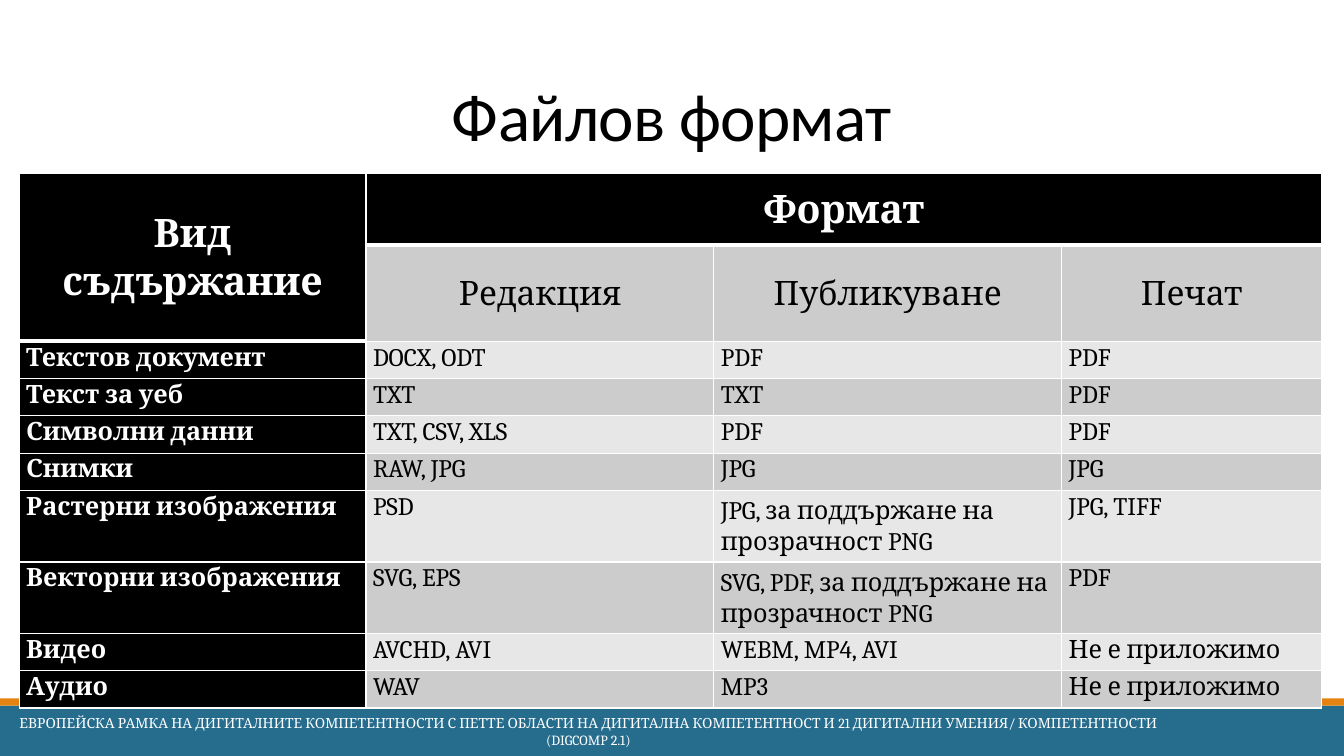
from dataclasses import dataclass

import pptx
import pptx.dml.color
import pptx.enum.shapes
import pptx.enum.text
import pptx.oxml
import pptx.oxml.ns
import pptx.util

EMU_PER_PX = 9144  # 100 px to the inch
ALIGN = pptx.enum.text.PP_ALIGN
ANCHOR = pptx.enum.text.MSO_ANCHOR


@dataclass(frozen=True)
class Theme:
    black: str = "000000"
    white: str = "FFFFFF"
    band_dark: str = "CCCCCC"
    band_light: str = "E7E7E7"
    blue: str = "256C8D"
    orange: str = "E48312"
    title_font: str = "Calibri"
    body_font: str = "Cambria"
    title_size: int = 48
    header_size: int = 28
    subheader_size: int = 24
    body_size: int = 18
    footer_size: int = 10


@dataclass(frozen=True)
class Box:
    left: int
    top: int
    width: int
    height: int

    def emu(self) -> tuple[int, ...]:
        return tuple(px(n) for n in (self.left, self.top, self.width, self.height))


@dataclass(frozen=True)
class TextStyle:
    size: int
    color: str
    font: str = "Cambria"
    bold: bool = False
    align: ALIGN = ALIGN.CENTER
    anchor: ANCHOR = ANCHOR.MIDDLE


@dataclass(frozen=True)
class ContentRow:
    kind: str
    editing: str
    publishing: str
    printing: str
    height: int = 37

    def texts(self) -> tuple[str, ...]:
        return self.kind, self.editing, self.publishing, self.printing


THEME = Theme()
SLIDE = Box(0, 0, 1333, 750)
TITLE = Box(0, 0, 1333, 159)
BANDS = ((Box(0, 700, 1333, 50), THEME.blue), (Box(0, 693, 1333, 7), THEME.orange))
TABLE = Box(19, 172, 1292, 507)
FOOTER = Box(0, 706, 1167, 40)
COLUMN_WIDTHS = (344, 345, 345, 258)
HEADER_HEIGHTS = (71, 70)
CELL_INSET = 7
FOOTER_INSET = 4
THIN, THICK = 1, 3

HEADER_STYLE = TextStyle(THEME.header_size, THEME.white, bold=True)
SUBHEADER_STYLE = TextStyle(THEME.subheader_size, THEME.black)
KIND_STYLE = TextStyle(THEME.body_size, THEME.white, bold=True,
                       align=ALIGN.JUSTIFY, anchor=ANCHOR.TOP)
BODY_STYLE = TextStyle(THEME.body_size, THEME.black, align=ALIGN.JUSTIFY, anchor=ANCHOR.TOP)
WRAPPED_STYLE = TextStyle(THEME.body_size, THEME.black, align=ALIGN.LEFT)

SUBHEADERS = ("Редакция", "Публикуване", "Печат")
CONTENT = (
    ContentRow("Текстов документ", "DOCX, ODT", "PDF", "PDF"),
    ContentRow("Текст за уеб", "TXT", "TXT", "PDF"),
    ContentRow("Символни данни", "TXT, CSV, XLS", "PDF", "PDF"),
    ContentRow("Снимки", "RAW, JPG", "JPG", "JPG"),
    ContentRow("Растерни изображения", "PSD",
               "JPG, за поддържане на прозрачност PNG", "JPG, TIFF", 71),
    ContentRow("Векторни изображения", "SVG, EPS",
               "SVG, PDF, за поддържане на прозрачност PNG", "PDF", 71),
    ContentRow("Видео", "AVCHD, AVI", "WEBM, MP4, AVI", "Не е приложимо"),
    ContentRow("Аудио", "WAV", "MP3", "Не е приложимо"),
)
FOOTER_TEXT = ("ЕВРОПЕЙСКА РАМКА НА ДИГИТАЛНИТЕ КОМПЕТЕНТНОСТИ С ПЕТТЕ ОБЛАСТИ НА ДИГИТАЛНА "
               "КОМПЕТЕНТНОСТ И 21 ДИГИТАЛНИ УМЕНИЯ/ КОМПЕТЕНТНОСТИ (DIGCOMP 2.1)")


def px(length: int) -> int:
    return pptx.util.Emu(length * EMU_PER_PX)


def rgb(color: str) -> pptx.dml.color.RGBColor:
    return pptx.dml.color.RGBColor.from_string(color)


def write(text_frame, text: str, style: TextStyle, line_spacing: float = 1.0, space_after: int = 0):
    """Fill the first paragraph with one styled run and return the run."""
    paragraph = text_frame.paragraphs[0]
    paragraph.alignment = style.align
    paragraph.line_spacing = line_spacing
    paragraph.space_after = pptx.util.Pt(space_after)
    run = paragraph.add_run()
    run.text = text
    run.font.size = pptx.util.Pt(style.size)
    run.font.name = style.font
    run.font.bold = style.bold
    run.font.color.rgb = rgb(style.color)
    return run


def add_band(slide, box: Box, color: str) -> None:
    shape = slide.shapes.add_shape(pptx.enum.shapes.MSO_SHAPE.RECTANGLE, *box.emu())
    shape.shadow.inherit = False
    shape.fill.solid()
    shape.fill.fore_color.rgb = rgb(color)
    shape.line.fill.background()


def format_title(slide) -> None:
    title = slide.shapes.title
    title.left, title.top, title.width, title.height = TITLE.emu()
    title.text_frame.vertical_anchor = ANCHOR.BOTTOM
    title.text_frame.auto_size = pptx.enum.text.MSO_AUTO_SIZE.NONE
    style = TextStyle(THEME.title_size, THEME.black, THEME.title_font)
    run = write(title.text_frame, "Файлов формат", style, line_spacing=0.85)
    run.font._element.set("spc", "-50")


def dress_cell(cell, fill: str, top: int, bottom: int) -> None:
    """Set the white borders, fill and margins of a cell."""
    properties = cell._tc.get_or_add_tcPr()
    for side, width in (("L", THIN), ("R", THIN), ("T", top), ("B", bottom)):
        properties.append(pptx.oxml.parse_xml(
            f'<a:ln{side} {pptx.oxml.ns.nsdecls("a")} w="{pptx.util.Pt(width)}">'
            f'<a:solidFill><a:srgbClr val="{THEME.white}"/></a:solidFill></a:ln{side}>'))
    cell.fill.solid()
    cell.fill.fore_color.rgb = rgb(fill)
    cell.margin_left = cell.margin_right = px(CELL_INSET)
    cell.margin_top = cell.margin_bottom = 0


def fill_cell(cell, text: str, style: TextStyle) -> None:
    cell.vertical_anchor = style.anchor
    write(cell.text_frame, text, style, line_spacing=1.07, space_after=8)


def add_format_table(slide) -> None:
    heights = HEADER_HEIGHTS + tuple(row.height for row in CONTENT)
    frame = slide.shapes.add_table(len(heights), len(COLUMN_WIDTHS), *TABLE.emu())
    table = frame.table
    table.first_row = table.horz_banding = False
    for column, width in zip(table.columns, COLUMN_WIDTHS):
        column.width = px(width)

    for r, height in enumerate(heights):
        table.rows[r].height = px(height)
        band = THEME.band_dark if r % 2 else THEME.band_light
        for c in range(len(COLUMN_WIDTHS)):
            header_end = 1 if c == 0 else 0
            dress_cell(table.cell(r, c), THEME.black if r == 0 or c == 0 else band,
                       top=THICK if r == header_end + 1 else THIN,
                       bottom=THICK if r == header_end else THIN)

    table.cell(0, 0).merge(table.cell(1, 0))
    table.cell(0, 1).merge(table.cell(0, 3))
    fill_cell(table.cell(0, 0), "Вид съдържание", HEADER_STYLE)
    fill_cell(table.cell(0, 1), "Формат", HEADER_STYLE)
    for c, text in enumerate(SUBHEADERS, start=1):
        fill_cell(table.cell(1, c), text, SUBHEADER_STYLE)
    for r, row in enumerate(CONTENT, start=len(HEADER_HEIGHTS)):
        publishing_style = WRAPPED_STYLE if row.height > 37 else BODY_STYLE
        styles = (KIND_STYLE, BODY_STYLE, publishing_style, BODY_STYLE)
        for c, (text, style) in enumerate(zip(row.texts(), styles)):
            fill_cell(table.cell(r, c), text, style)


def add_footer(slide) -> None:
    text_frame = slide.shapes.add_textbox(*FOOTER.emu()).text_frame
    text_frame.word_wrap = True
    text_frame.vertical_anchor = ANCHOR.MIDDLE
    text_frame.margin_left = text_frame.margin_right = px(FOOTER_INSET)
    text_frame.margin_top = text_frame.margin_bottom = px(FOOTER_INSET)
    write(text_frame, FOOTER_TEXT, TextStyle(THEME.footer_size, THEME.white))


def main() -> None:
    presentation = pptx.Presentation()
    presentation.slide_width, presentation.slide_height = px(SLIDE.width), px(SLIDE.height)
    slide = presentation.slides.add_slide(presentation.slide_layouts[5])
    for box, color in BANDS:
        add_band(slide, box, color)
    format_title(slide)
    add_format_table(slide)
    add_footer(slide)
    presentation.save("out.pptx")


if __name__ == "__main__":
    main()
